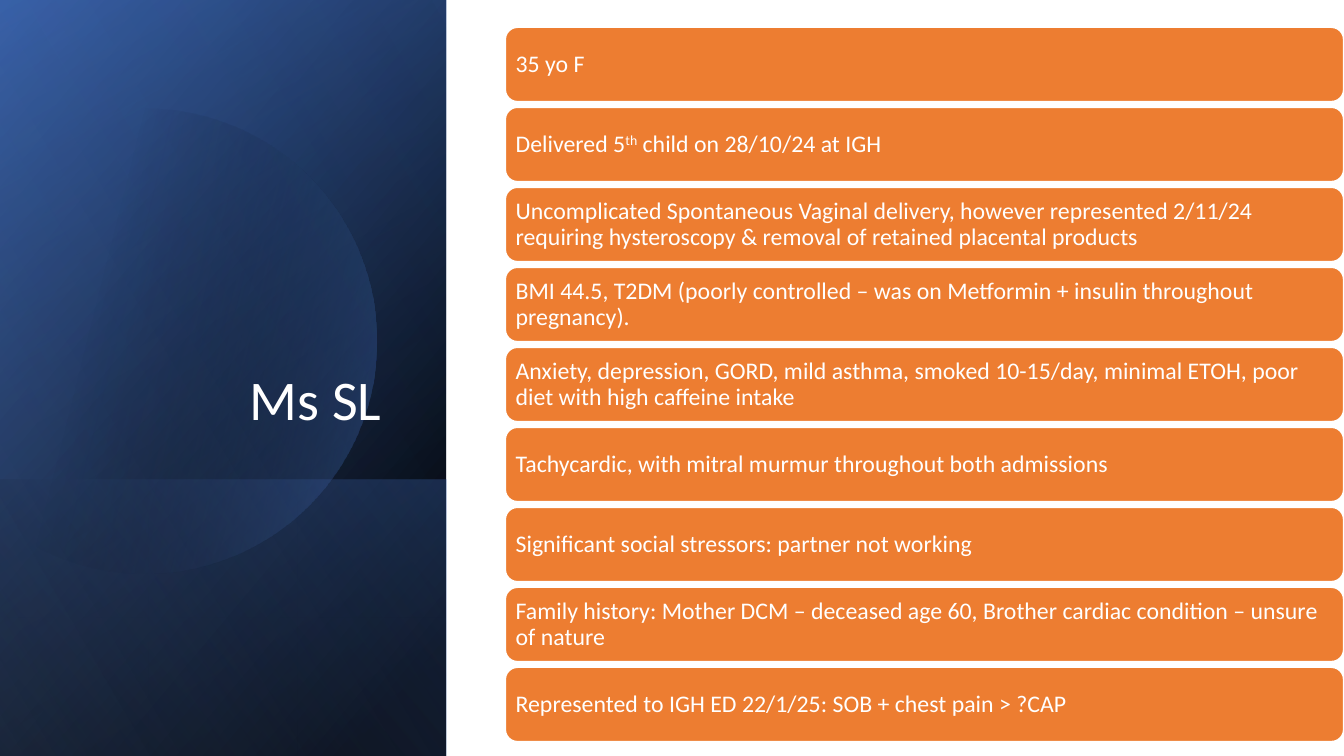
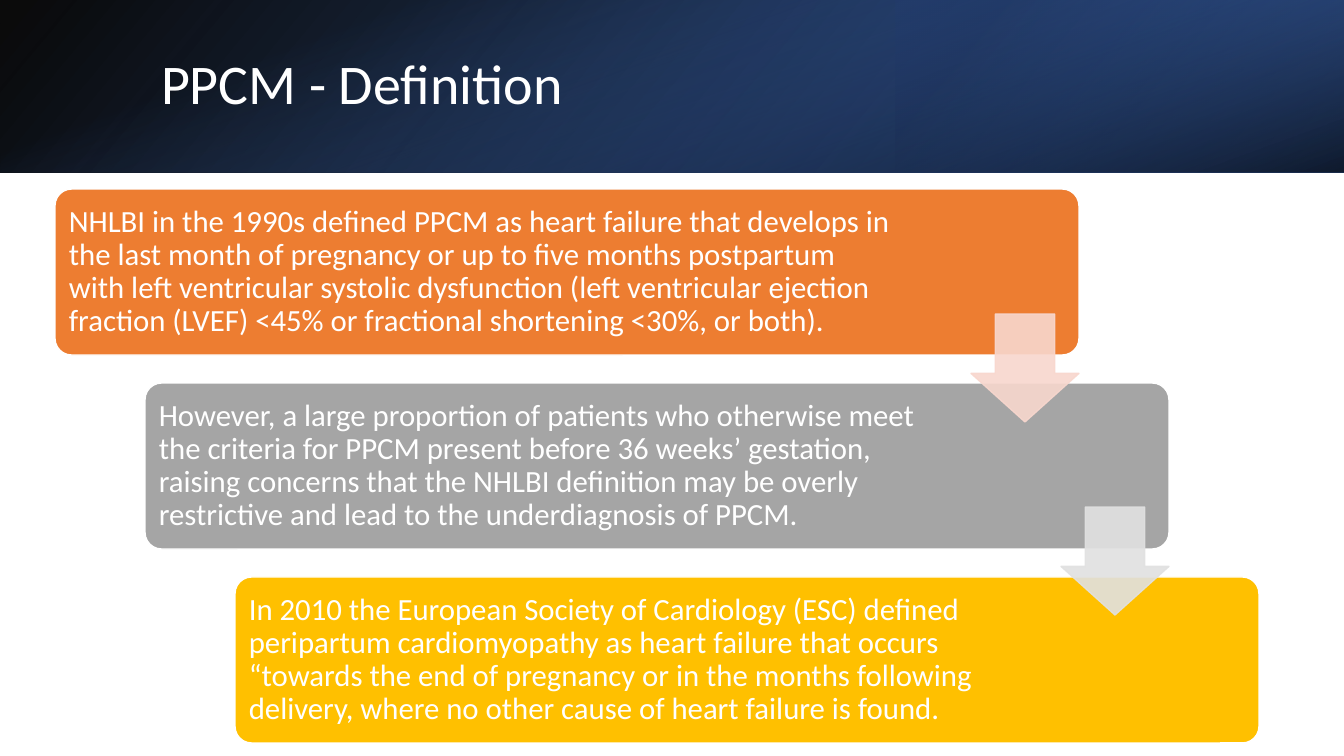
import math
import pptx
import pptx.util
import pptx.dml.color
import pptx.enum.shapes
import pptx.enum.text
import pptx.oxml.ns
from lxml import etree

SHAPE = pptx.enum.shapes.MSO_SHAPE
ALIGN = pptx.enum.text.PP_ALIGN
ANCHOR = pptx.enum.text.MSO_ANCHOR

BLACK, WHITE = "000000", "FFFFFF"
BLUE, DEEP, NAVY, PALE = "4472C4", "2F5597", "203864", "8FAADC"
ORANGE, GREY, GOLD = "ED7D31", "A5A5A5", "FFC000"
PINK, SILVER = "F8D7CE", "E1E1E1"
WIDE, HIGH = 1344, 756


def emu(px):
    return round(px * 914400 / 100.8)


def rgb(code):
    return pptx.dml.color.RGBColor.from_string(code)


def sub(parent, tag, **attrs):
    return etree.SubElement(parent, pptx.oxml.ns.qn(tag), attrs)


def fade(fill, alpha):
    """Set the opacity, in percent, of a solid fill."""
    fill.fore_color._xFill[0].append(
        etree.Element(pptx.oxml.ns.qn("a:alpha"), val=str(alpha * 1000)))


def blend(shape, stops, angle):
    """Fill with a linear gradient of (position, colour, opacity) stops."""
    props = shape._element.spPr
    grad = etree.Element(pptx.oxml.ns.qn("a:gradFill"), rotWithShape="1")
    row = sub(grad, "a:gsLst")
    for place, code, alpha in stops:
        stop = sub(row, "a:gs", pos=str(place * 1000))
        tint = sub(stop, "a:srgbClr", val=code)
        if alpha < 100:
            sub(tint, "a:alpha", val=str(alpha * 1000))
    sub(grad, "a:lin", ang=str(angle * 60000), scaled="0")
    props.insert(2, grad)
    shape.line.fill.background()
    shape.shadow.inherit = False


def write(frame, text, size, align=ALIGN.LEFT, anchor=ANCHOR.MIDDLE, pads=None):
    """Fill a frame with one paragraph; text between ^ marks is raised."""
    frame.word_wrap = True
    frame.auto_size = pptx.enum.text.MSO_AUTO_SIZE.NONE
    frame.vertical_anchor = anchor
    if pads:
        (frame.margin_left, frame.margin_top,
         frame.margin_right, frame.margin_bottom) = map(emu, pads)
    para = frame.paragraphs[0]
    para.alignment = align
    para.line_spacing = 0.9
    for index, part in enumerate(text.split("^")):
        run = para.add_run()
        run.text = part
        run.font.name = "Calibri"
        run.font.size = pptx.util.Pt(size)
        run.font.color.rgb = rgb(WHITE)
        if index % 2:
            run._r.get_or_add_rPr().set("baseline", "30000")


class Deck:
    def __init__(self):
        self.file = pptx.Presentation()
        self.file.slide_width = emu(WIDE)
        self.file.slide_height = emu(HIGH)
        self.slide = None

    def page(self):
        self.slide = self.file.slides.add_slide(self.file.slide_layouts[5])

    def title(self, text, x, y, w, h, **style):
        """Place the title above everything drawn so far."""
        head = self.slide.shapes.title
        head.left, head.top, head.width, head.height = map(emu, (x, y, w, h))
        write(head.text_frame, text, 40, **style)
        self.slide.shapes._spTree.append(head._element)

    def band(self, x, y, w, h, stops, angle, turn=90, flip=True):
        """Draw a gradient panel that covers the box once it is turned."""
        long, deep = (h, w) if turn == 90 else (w, h)
        shape = self.slide.shapes.add_shape(
            SHAPE.RECTANGLE, emu(x + (w - long) / 2), emu(y + (h - deep) / 2),
            emu(long), emu(deep))
        shape.rotation = turn
        if flip:
            shape._element.spPr.xfrm.set("flipH", "1")
        blend(shape, stops, angle)

    def disc(self, x, y, radius, stops, angle):
        """Draw a disc cut off by the left edge of the slide."""
        reach = math.acos(-x / radius)
        turns = [reach * step / 60 for step in range(-60, 61)]
        dots = [(emu(x + radius * math.cos(t)), emu(y + radius * math.sin(t)))
                for t in turns]
        path = self.slide.shapes.build_freeform(*dots[0])
        path.add_line_segments(dots[1:], close=True)
        blend(path.convert_to_shape(), stops, angle)

    def block(self, kind, x, y, w, h, code, edge, width=1, adjust=()):
        shape = self.slide.shapes.add_shape(kind, *map(emu, (x, y, w, h)))
        for index, value in enumerate(adjust):
            shape.adjustments[index] = value
        shape.shadow.inherit = False
        shape.fill.solid()
        shape.fill.fore_color.rgb = rgb(code)
        shape.line.color.rgb = rgb(edge)
        shape.line.width = pptx.util.Pt(width)
        return shape

    def card(self, text, x, y, w, h, code, size, pads, **style):
        shape = self.block(SHAPE.ROUNDED_RECTANGLE, x, y, w, h, code, WHITE, **style)
        write(shape.text_frame, text, size, pads=pads)

    def arrow(self, x, y, side, code):
        shape = self.block(SHAPE.DOWN_ARROW, x, y, side, side, code, code,
                           adjust=(0.55, 0.45))
        # adjustments run in the order head length, shaft width
        shape.adjustments[0], shape.adjustments[1] = 0.55, 0.45
        fade(shape.fill, 90)
        fade(shape.line.fill, 90)


def history(deck):
    deck.page()
    side = (0, 0, 446, HIGH)
    deck.band(*side, [(8, BLACK, 100), (100, DEEP, 100)], 50)
    deck.band(*side, [(0, BLACK, 0), (99, BLUE, 46)], 30)
    deck.band(0, 480, 446, 276, [(2, BLUE, 29), (100, BLACK, 30)], 130)
    deck.disc(144, 341, 232, [(29, BLACK, 0), (100, BLUE, 43)], 14)
    deck.band(*side, [(0, BLACK, 0), (99, PALE, 11)], 120)
    deck.title("Ms SL ", 51, 65, 353, 373, align=ALIGN.RIGHT, anchor=ANCHOR.BOTTOM)
    facts = [
        "35 yo F",
        "Delivered 5^th^ child on 28/10/24 at IGH",
        "Uncomplicated Spontaneous Vaginal delivery, however represented 2/11/24 "
        "requiring hysteroscopy & removal of retained placental products",
        "BMI 44.5, T2DM (poorly controlled – was on Metformin + insulin throughout "
        "pregnancy).",
        "Anxiety, depression, GORD, mild asthma, smoked 10-15/day, minimal ETOH, "
        "poor diet with high caffeine intake",
        "Tachycardic, with mitral murmur throughout both admissions",
        "Significant social stressors: partner not working",
        "Family history: Mother DCM – deceased age 60, Brother cardiac condition "
        "– unsure of nature",
        "Represented to IGH ED 22/1/25: SOB + chest pain > ?CAP",
    ]
    for row, fact in enumerate(facts):
        deck.card(fact, 505, 27 + 80 * row, 839, 75, ORANGE, 17, (7, 7, 7, 7),
                  width=1.5)


def meaning(deck):
    deck.page()
    top = (0, 0, WIDE, 173)
    deck.band(*top, [(0, BLACK, 96), (100, DEEP, 100)], 140, turn=0)
    deck.band(896, 0, 448, 173, [(19, NAVY, 68), (100, BLUE, 79)], 320, turn=180)
    deck.band(*top, [(23, BLUE, 0), (99, BLACK, 74)], 340, flip=False)
    deck.title("PPCM - Definition", 151, 38, 1107, 97)
    steps = [
        (ORANGE, 179, "NHLBI in the 1990s defined PPCM as heart failure that develops "
         "in the last month of pregnancy or up to five months postpartum with left "
         "ventricular systolic dysfunction (left ventricular ejection fraction (LVEF) "
         "<45% or fractional shortening <30%, or both)."),
        (GREY, 208, "However, a large proportion of patients who otherwise meet the "
         "criteria for PPCM present before 36 weeks’ gestation, raising concerns that "
         "the NHLBI definition may be overly restrictive and lead to the "
         "underdiagnosis of PPCM."),
        (GOLD, 208, "In 2010 the European Society of Cardiology (ESC) defined "
         "peripartum cardiomyopathy as heart failure that occurs “towards the end of "
         "pregnancy or in the months following delivery, where no other cause of "
         "heart failure is found."),
    ]
    for row, (code, right, text) in enumerate(steps):
        deck.card(text, 55 + 90 * row, 189 + 194 * row, 1024, 166, code, 22,
                  (9, 9, right, 9), adjust=(0.1,))
    for row, code in enumerate((PINK, SILVER)):
        deck.arrow(971 + 90 * row, 314 + 193 * row, 108, code)


def main():
    deck = Deck()
    history(deck)
    meaning(deck)
    deck.file.save("out.pptx")


if __name__ == "__main__":
    main()
